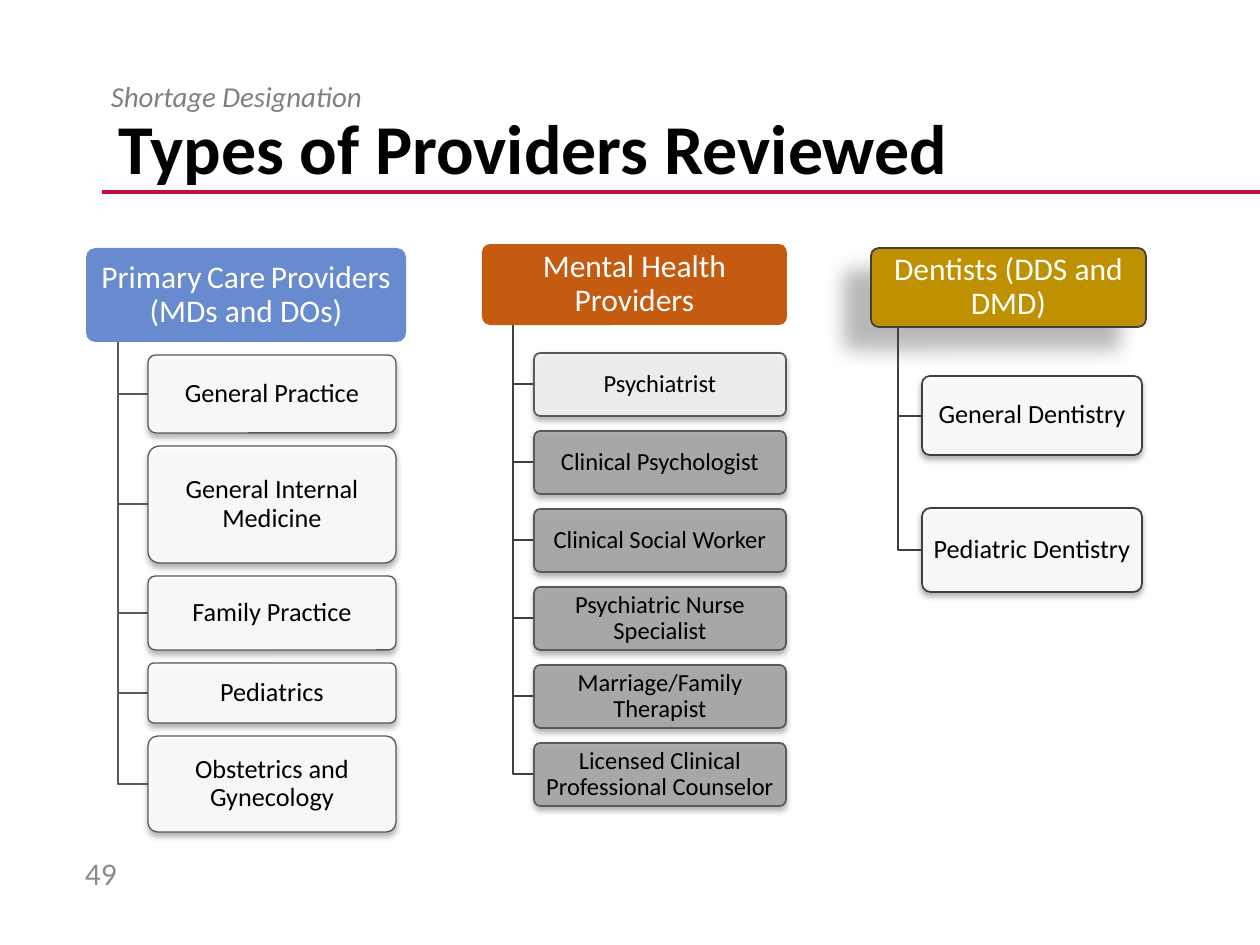
from lxml import etree
from pptx import Presentation
from pptx.dml.color import RGBColor
from pptx.enum.shapes import MSO_CONNECTOR, MSO_SHAPE
from pptx.enum.text import MSO_ANCHOR, MSO_AUTO_SIZE, PP_ALIGN
from pptx.oxml.ns import qn
from pptx.util import Pt

LEFT, CENTER = PP_ALIGN.LEFT, PP_ALIGN.CENTER
TOP, MIDDLE = MSO_ANCHOR.TOP, MSO_ANCHOR.MIDDLE
ROUND = MSO_SHAPE.ROUNDED_RECTANGLE
STRAIGHT = MSO_CONNECTOR.STRAIGHT
NO_FIT = MSO_AUTO_SIZE.NONE

SCALE = 914400 / 126
FONT = "Calibri"
BLACK = RGBColor(0x00, 0x00, 0x00)
WHITE = RGBColor(0xFF, 0xFF, 0xFF)
GRAY = RGBColor(0x80, 0x80, 0x80)
PALE = RGBColor(0x8C, 0x8C, 0x8C)
DARK = RGBColor(0x40, 0x40, 0x40)
SLATE = RGBColor(0x59, 0x59, 0x59)
SILVER = RGBColor(0xA6, 0xA6, 0xA6)
LIGHT = RGBColor(0xF2, 0xF2, 0xF2)
CRIMSON = RGBColor(0xC4, 0x0E, 0x3E)
BLUE = RGBColor(0x68, 0x8A, 0xCE)
ORANGE = RGBColor(0xC5, 0x5A, 0x11)
GOLD = RGBColor(0xBF, 0x90, 0x00)

SOFT = dict(alpha=32, blur=3.5, dist=2.2, angle=90)
DEEP = dict(alpha=28, blur=11.8, dist=19.7, angle=141)

TREES = [
    dict(head=[("Dentists (DDS and DMD)", 18)], box=(871, 248, 275, 79),
         color=GOLD, edge=DARK, shade=DEEP, trunk=898, wire=DARK,
         x=922, y=376, width=220, gap=53, size=15, line=DARK, weight=1,
         leaves=[("General Dentistry", 79, WHITE),
                 ("Pediatric Dentistry", 84, WHITE)]),
    dict(head=[("Mental Health Providers", 18)], box=(482, 244, 305, 81),
         color=ORANGE, edge=None, shade=None, trunk=513, wire=DARK,
         x=534, y=353, width=252, gap=15, size=14, line=SLATE, weight=1,
         leaves=[("Psychiatrist", 63, LIGHT),
                 ("Clinical Psychologist", 63, SILVER),
                 ("Clinical Social Worker", 63, SILVER),
                 ("Psychiatric Nurse Specialist", 63, SILVER),
                 ("Marriage/Family Therapist", 63, SILVER),
                 ("Licensed Clinical Professional Counselor", 63, SILVER)]),
    dict(head=[("Primary", 18), (" ", 14), ("Care", 18), (" ", 14),
               ("Providers (MDs and DOs)", 18)], box=(86, 248, 320, 94),
         color=BLUE, edge=None, shade=None, trunk=118, wire=SLATE,
         x=148, y=355, width=248, gap=13, size=15, line=SLATE, weight=0.75,
         leaves=[("General Practice", 78, WHITE),
                 ("General Internal Medicine", 117, WHITE),
                 ("Family Practice", 74, WHITE),
                 ("Pediatrics", 60, WHITE),
                 ("Obstetrics and Gynecology", 96, WHITE)]),
]


def px(*nums):
    return [round(num * SCALE) for num in nums]


def write(shape, parts, color=BLACK, bold=False, italic=False,
          align=LEFT, anchor=MIDDLE, space=0.9, pad=(13, 6)):
    frame = shape.text_frame
    frame.word_wrap = True
    frame.auto_size = NO_FIT
    frame.vertical_anchor = anchor
    frame.margin_left = frame.margin_right = px(pad[0])[0]
    frame.margin_top = frame.margin_bottom = px(pad[1])[0]
    para = frame.paragraphs[0]
    para.alignment = align
    para.line_spacing = space
    for text, size in parts:
        run = para.add_run()
        run.text = text
        font = run.font
        font.name, font.size = FONT, Pt(size)
        font.bold, font.italic = bold, italic
        font.color.rgb = color


def cast(shape, alpha, blur, dist, angle):
    effects = shape._element.spPr.find(qn("a:effectLst"))
    outer = etree.SubElement(
        effects, qn("a:outerShdw"), blurRad=str(Pt(blur)),
        dist=str(Pt(dist)), dir=str(angle * 60000), rotWithShape="0")
    tint = etree.SubElement(outer, qn("a:srgbClr"), val="000000")
    etree.SubElement(tint, qn("a:alpha"), val=str(alpha * 1000))


def add_box(slide, box, fill, edge=None, weight=1, shade=None, alpha=100):
    shape = slide.shapes.add_shape(ROUND, *px(*box))
    shape.adjustments[0] = 0.1
    shape.fill.solid()
    shape.fill.fore_color.rgb = fill
    if alpha < 100:
        tint = shape._element.spPr.find(".//" + qn("a:srgbClr"))
        etree.SubElement(tint, qn("a:alpha"), val=str(alpha * 1000))
    if edge is None:
        shape.line.fill.background()
    else:
        shape.line.color.rgb = edge
        shape.line.width = Pt(weight)
    shape.shadow.inherit = False
    if shade:
        cast(shape, **shade)
    return shape


def add_elbow(slide, start, end, color):
    build = slide.shapes.build_freeform(*start, scale=SCALE)
    build.add_line_segments([(start[0], end[1]), end], close=False)
    elbow = build.convert_to_shape()
    elbow.fill.background()
    elbow.line.color.rgb = color
    elbow.line.width = Pt(1)
    elbow.shadow.inherit = False


def add_rule(slide, x, y, end):
    rule = slide.shapes.add_connector(STRAIGHT, *px(x, y, end, y))
    rule.line.color.rgb = CRIMSON
    rule.line.width = Pt(2.25)
    etree.SubElement(rule._element.spPr, qn("a:effectLst"))


def add_tree(slide, tree):
    head = add_box(slide, tree["box"], tree["color"], tree["edge"],
                   shade=tree["shade"])
    write(head, tree["head"], color=WHITE, align=CENTER, pad=(8, 6))
    base = tree["box"][1] + tree["box"][3]
    x, y = tree["x"], tree["y"]
    for label, height, fill in tree["leaves"]:
        add_elbow(slide, (tree["trunk"], base), (x, y + height / 2),
                  tree["wire"])
        leaf = add_box(slide, (x, y, tree["width"], height), fill,
                       tree["line"], tree["weight"], SOFT, alpha=90)
        write(leaf, [(label, tree["size"])], align=CENTER, pad=(6, 4))
        y += height + tree["gap"]


def add_text(slide, box, text, size, **style):
    write(slide.shapes.add_textbox(*px(*box)), [(text, size)], **style)


def main():
    deck = Presentation()
    deck.slide_width, deck.slide_height = px(1260, 945)
    slide = deck.slides.add_slide(deck.slide_layouts[5])
    title = slide.shapes.title
    title.left, title.top, title.width, title.height = px(105, 113, 1073, 77)
    write(title, [("Types of Providers Reviewed", 40)], bold=True)
    add_rule(slide, 102, 192, 1260)
    add_text(slide, (98, 77, 1082, 35), "Shortage Designation", 16.5,
             color=GRAY, italic=True, anchor=TOP)
    add_text(slide, (72, 848, 69, 50), "49", 18, color=PALE, space=1)
    for tree in TREES:
        add_tree(slide, tree)
    deck.save("out.pptx")


if __name__ == "__main__":
    main()
